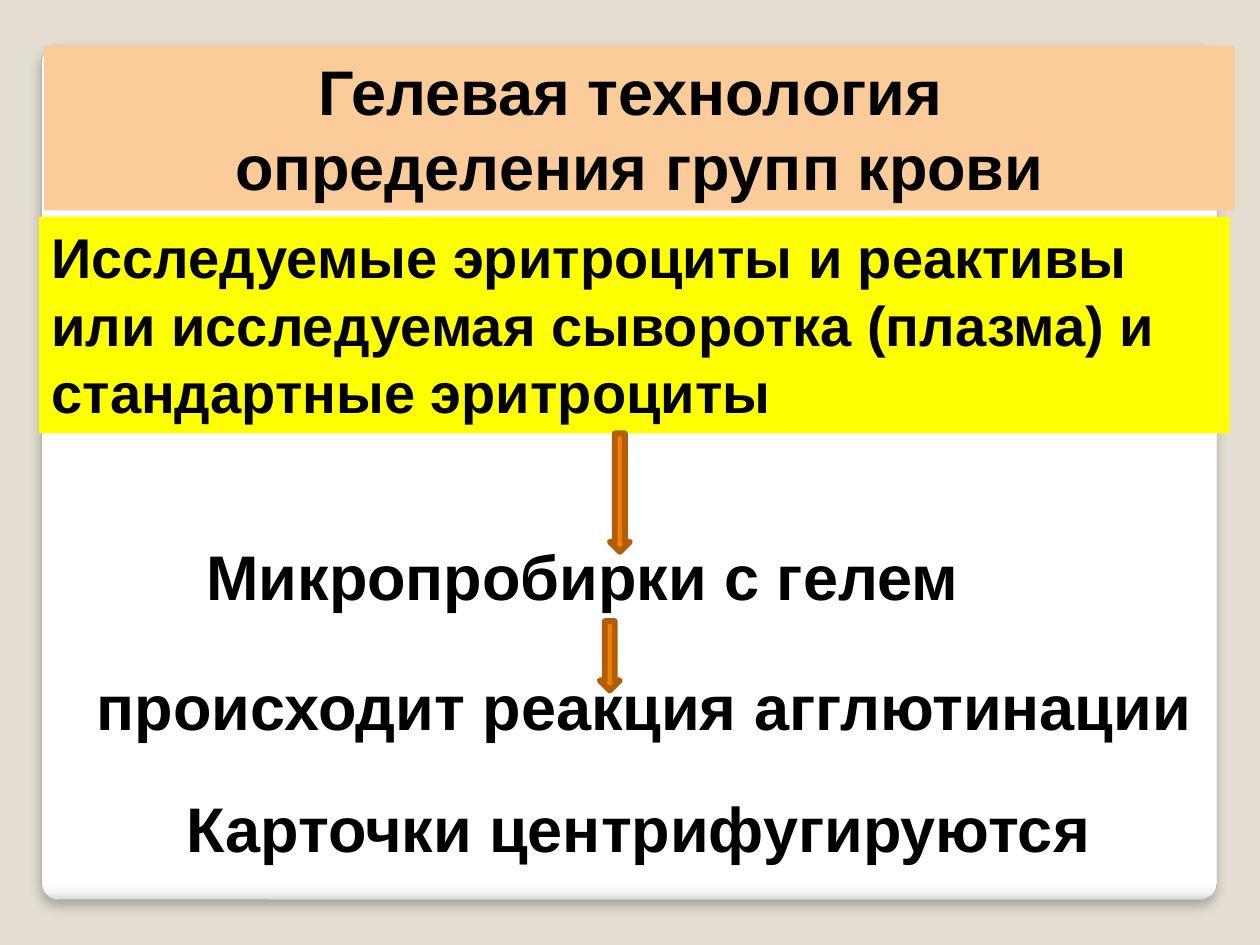
from dataclasses import dataclass

from lxml.etree import fromstring
from pptx import Presentation
from pptx.dml.color import RGBColor
from pptx.enum.shapes import MSO_SHAPE
from pptx.enum.text import MSO_ANCHOR, MSO_AUTO_SIZE, PP_ALIGN
from pptx.oxml.ns import nsdecls
from pptx.util import Inches, Pt


@dataclass(frozen=True)
class Theme:
    font: str = "Arial"
    large: int = 36
    medium: int = 32
    text: str = "000000"
    backdrop: str = "E3DED1"
    card_edge: str = "A4A4A4"
    heading: str = "FBCC9A"
    samples: str = "FFFF00"
    arrow: str = "F07F09"
    arrow_edge: str = "B25E07"
    card_stops: tuple = ((0, "FFFFFF"), (98, "FFFFFF"), (99, "F7F7F7"), (100, "DADADA"))


theme = Theme()


def rgb(code):
    return RGBColor.from_string(code)


def write(shape, lines, size, align=PP_ALIGN.LEFT, anchor=MSO_ANCHOR.TOP):
    frame = shape.text_frame
    frame.text = "\n".join(lines)
    frame.word_wrap = True
    frame.auto_size = MSO_AUTO_SIZE.NONE
    frame.vertical_anchor = anchor
    for paragraph in frame.paragraphs:
        paragraph.alignment = align
        font = paragraph.font
        font.name, font.size, font.bold = theme.font, Pt(size), True
        font.color.rgb = rgb(theme.text)


deck = Presentation()
deck.slide_width, deck.slide_height = Inches(10), Inches(7.5)
slide = deck.slides.add_slide(deck.slide_layouts[5])
slide.background.fill.solid()
slide.background.fill.fore_color.rgb = rgb(theme.backdrop)
shapes = slide.shapes

# White card behind everything
card = shapes.add_shape(
    MSO_SHAPE.ROUNDED_RECTANGLE, Inches(0.33), Inches(0.36), Inches(9.33), Inches(6.78)
)
card.adjustments[0] = 0.02
card.fill.gradient()
card.fill.gradient_angle = 270
stops = card.fill._fill._gradFill.gsLst
for stop in list(stops):
    stops.remove(stop)
for percent, code in theme.card_stops:
    stops.append(fromstring(
        f'<a:gs {nsdecls("a")} pos="{percent * 1000}"><a:srgbClr val="{code}"/></a:gs>'
    ))
card.line.color.rgb = rgb(theme.card_edge)
card.line.width = Pt(0.16)
card._element.spPr.append(fromstring(
    f'<a:effectLst {nsdecls("a")}>'
    f'<a:outerShdw blurRad="{Pt(6)}" dist="{Pt(4)}" dir="5400000" algn="t" rotWithShape="0">'
    '<a:srgbClr val="000000"><a:alpha val="25000"/></a:srgbClr>'
    "</a:outerShdw></a:effectLst>"
))
shapes._spTree.insert(2, card._element)

# Heading and the samples being tested
heading = shapes.title
heading.left, heading.top = Inches(0.35), Inches(0.36)
heading.width, heading.height = Inches(9.45), Inches(1.31)
heading.fill.solid()
heading.fill.fore_color.rgb = rgb(theme.heading)
write(heading, ["Гелевая технология ", "определения групп крови"], theme.large,
      PP_ALIGN.CENTER, MSO_ANCHOR.MIDDLE)

samples = shapes.add_textbox(Inches(0.31), Inches(1.72), Inches(9.45), Inches(1.72))
samples.fill.solid()
samples.fill.fore_color.rgb = rgb(theme.samples)
write(samples, ["Исследуемые эритроциты и реактивы или исследуемая сыворотка (плазма) "
                "и стандартные эритроциты"], theme.medium)

# Steps of the procedure, with the arrows that lead to them
for left, top, height in ((4.84, 3.44, 0.94), (4.76, 4.93, 0.55)):
    arrow = shapes.add_shape(
        MSO_SHAPE.DOWN_ARROW, Inches(left), Inches(top), Inches(0.16), Inches(height)
    )
    arrow.shadow.inherit = False
    arrow.fill.solid()
    arrow.fill.fore_color.rgb = rgb(theme.arrow)
    arrow.line.color.rgb = rgb(theme.arrow_edge)
    arrow.line.width = Pt(3.35)

for left, top, width, wording in (
    (1.54, 4.22, 6.93, "Микропробирки с гелем"),
    (0.67, 5.25, 8.9, "происходит реакция агглютинации"),
    (1.38, 6.22, 7.88, "Карточки центрифугируются"),
):
    step = shapes.add_textbox(Inches(left), Inches(top), Inches(width), Inches(0.71))
    write(step, [wording], theme.large)

deck.save("out.pptx")
